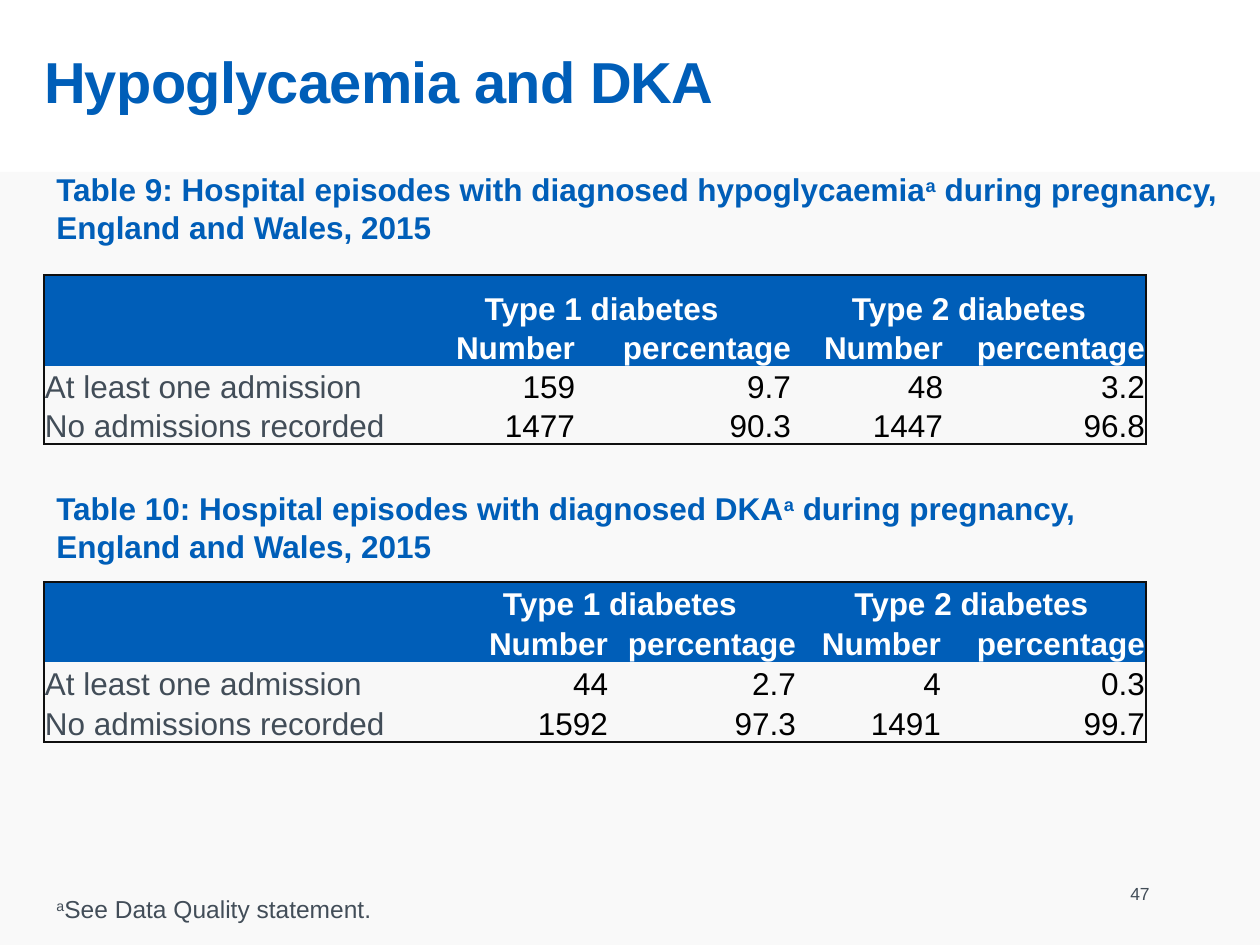
"""Build the slide on hypoglycaemia and DKA hospital episodes."""
import pptx
import pptx.dml.color
import pptx.enum.shapes
import pptx.enum.text
import pptx.oxml
import pptx.oxml.ns
import pptx.util

RGBColor = pptx.dml.color.RGBColor
ALIGN = pptx.enum.text.PP_ALIGN
ANCHOR = pptx.enum.text.MSO_ANCHOR

BLUE = RGBColor(0x00, 0x5E, 0xB8)
SLATE = RGBColor(0x42, 0x4D, 0x58)
WHITE = RGBColor(0xFF, 0xFF, 0xFF)
BLACK = RGBColor(0x00, 0x00, 0x00)
PANEL = RGBColor(0xF9, 0xF9, 0xF9)
CELL = RGBColor(0xF8, 0xF8, 0xF8)
BORDER = RGBColor(0x0F, 0x0F, 0x0F)

FONT = "Arial"
LEFT = 44
SCALE = 914400 / 126

TITLE = "Hypoglycaemia and DKA"
HEADER = [
    ["", "Type 1 diabetes", "", "Type 2 diabetes", ""],
    ["", "Number", "percentage", "Number", "percentage"],
]
TABLES = [
    {
        "caption": ["Table 9: Hospital episodes with diagnosed hypoglycaemia", "a",
                    " during pregnancy, England and Wales, 2015"],
        "caption_box": (LEFT, 164, 1211, 89),
        "top": 275,
        "columns": [367, 165, 216, 152, 202],
        "rows": [52, 39, 39, 39],
        "data": [
            ["At least one admission", "159", "9.7", "48", "3.2"],
            ["No admissions recorded", "1477", "90.3", "1447", "96.8"],
        ],
    },
    {
        "caption": ["Table 10: Hospital episodes with diagnosed DKA", "a",
                    " during pregnancy, England and Wales, 2015"],
        "caption_box": (LEFT, 483, 1171, 89),
        "top": 582,
        "columns": [399, 166, 188, 145, 204],
        "rows": [40, 40, 40, 40],
        "data": [
            ["At least one admission", "44", "2.7", "4", "0.3"],
            ["No admissions recorded", "1592", "97.3", "1491", "99.7"],
        ],
    },
]
FOOTNOTE = ["", "a", "See Data Quality statement."]
PAGE_NUMBER = "47"


def px(length):
    return pptx.util.Emu(round(length * SCALE))


def box(*lengths):
    return [px(length) for length in lengths]


def write(frame, parts, size=18, color=BLUE, bold=False, align=ALIGN.LEFT, spacing=None):
    """Write the parts as runs, raising every second one as a superscript."""
    paragraph = frame.paragraphs[0]
    paragraph.alignment = align
    for index, part in enumerate(parts):
        if not part:
            continue
        run = paragraph.add_run()
        run.text = part
        run.font.name = FONT
        run.font.size = pptx.util.Pt(size)
        run.font.bold = bold
        run.font.color.rgb = color
        properties = run.font._element
        if index % 2:
            properties.set("baseline", "30000")
        if spacing is not None:
            properties.set("spc", str(spacing))


def add_text(slide, position, parts, anchor=ANCHOR.TOP, **text_format):
    frame = slide.shapes.add_textbox(*box(*position)).text_frame
    frame.word_wrap = True
    frame.vertical_anchor = anchor
    write(frame, parts, **text_format)


def set_borders(cell, visible_sides):
    properties = cell._tc.get_or_add_tcPr()
    for side in "LRTB":
        paint = "<a:noFill/>"
        if side in visible_sides:
            paint = f'<a:solidFill><a:srgbClr val="{BORDER}"/></a:solidFill>'
        properties.append(pptx.oxml.parse_xml(
            f'<a:ln{side} {pptx.oxml.ns.nsdecls("a")} w="12700">{paint}</a:ln{side}>'))


def add_data_table(slide, top, columns, rows, data):
    values = HEADER + data
    position = box(LEFT, top, sum(columns), sum(rows))
    table = slide.shapes.add_table(len(rows), len(columns), *position).table
    for column, width in zip(table.columns, columns):
        column.width = px(width)
    for row, height in zip(table.rows, rows):
        row.height = px(height)
    for first in (1, 3):
        table.cell(0, first).merge(table.cell(0, first + 1))
    for row, row_values in enumerate(values):
        is_header = row < len(HEADER)
        for column, value in enumerate(row_values):
            cell = table.cell(row, column)
            cell.margin_left = cell.margin_right = cell.margin_top = px(1)
            cell.margin_bottom = 0
            cell.vertical_anchor = ANCHOR.BOTTOM
            edges = {
                "L": column == 0,
                "R": column + cell.span_width >= len(columns),
                "T": row == 0,
                "B": row == len(rows) - 1,
            }
            set_borders(cell, [side for side, visible in edges.items() if visible])
            cell.fill.solid()
            cell.fill.fore_color.rgb = BLUE if is_header else CELL
            color = WHITE if is_header else BLACK if column else SLATE
            align = ALIGN.CENTER if row == 0 else ALIGN.RIGHT if column else ALIGN.LEFT
            write(cell.text_frame, [value], color=color, bold=is_header, align=align)


def main():
    presentation = pptx.Presentation()
    presentation.slide_width, presentation.slide_height = box(1260, 945)
    slide = presentation.slides.add_slide(presentation.slide_layouts[5])

    panel = slide.shapes.add_shape(
        pptx.enum.shapes.MSO_SHAPE.RECTANGLE, *box(0, 172, 1260, 773))
    panel.shadow.inherit = False
    panel.fill.solid()
    panel.fill.fore_color.rgb = PANEL
    panel.line.fill.background()

    title = slide.shapes.title
    title.left, title.top, title.width, title.height = box(LEFT, 39, 1052, 97)
    frame = title.text_frame
    frame.auto_size = pptx.enum.text.MSO_AUTO_SIZE.NONE
    frame.vertical_anchor = ANCHOR.TOP
    frame.margin_left = frame.margin_right = frame.margin_bottom = 0
    frame.margin_top = px(7)
    write(frame, [TITLE], size=33, bold=True, spacing=-40)

    for content in TABLES:
        add_text(slide, content["caption_box"], content["caption"], bold=True)
        add_data_table(slide, content["top"], content["columns"], content["rows"],
                       content["data"])

    add_text(slide, (LEFT, 888, 863, 43), FOOTNOTE, size=14, color=SLATE)
    add_text(slide, (868, 869, 294, 50), [PAGE_NUMBER], anchor=ANCHOR.MIDDLE,
             size=10, color=SLATE, align=ALIGN.RIGHT)
    presentation.save("out.pptx")


if __name__ == "__main__":
    main()
